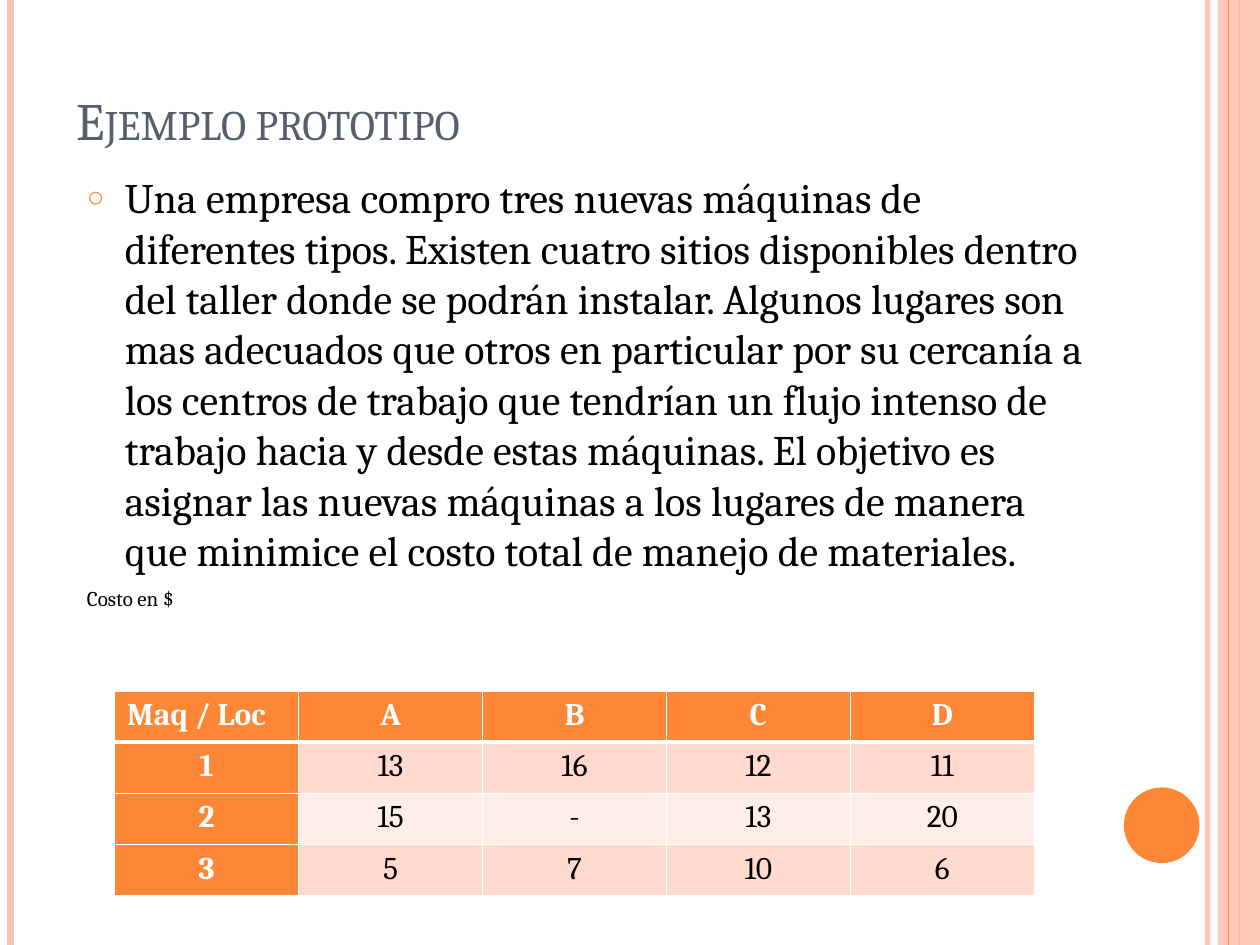
from lxml import etree
from pptx import Presentation
from pptx.dml import color
from pptx.enum import shapes, text
from pptx.oxml import ns
from pptx.util import Pt

FONT = "Cambria"
ORANGE, PEACH, WHITE, BLACK = "FE8637", "FEC3AE", "FFFFFF", "000000"
BANDS = ["FFD9CE", "FFEDE8"]
STATEMENT = (
    "Una empresa compro tres nuevas máquinas de diferentes tipos. "
    "Existen cuatro sitios disponibles dentro del taller donde se podrán instalar. "
    "Algunos lugares son mas adecuados que otros en particular por su cercanía a "
    "los centros de trabajo que tendrían un flujo intenso de trabajo hacia y desde "
    "estas máquinas. El objetivo es asignar las nuevas máquinas a los lugares de "
    "manera que minimice el costo total de manejo de materiales."
)
COSTS = [
    ["Maq / Loc", "A", "B", "C", "D"],
    ["1", "13", "16", "12", "11"],
    ["2", "15", "-", "13", "20"],
    ["3", "5", "7", "10", "6"],
]


def rgb(value):
    return color.RGBColor.from_string(value)


def sub(parent, tag, **attrs):
    return etree.SubElement(parent, ns.qn(tag), attrs)


def set_alpha(element, percent):
    sub(next(element.iter(ns.qn("a:srgbClr"))), "a:alpha", val=str(percent * 1000))


def write(p, words, size=18, fill=BLACK, bold=False, align=text.PP_ALIGN.LEFT):
    p.alignment = align
    r = p.add_run()
    r.text = words
    r.font.name, r.font.size, r.font.bold = FONT, Pt(size), bold
    r.font.color.rgb = rgb(fill)
    return r


def place(sp, left, top, width, height):
    sp.left, sp.top, sp.width, sp.height = Pt(left), Pt(top), Pt(width), Pt(height)


def add_stripe(s, x, top, height, fill, width, alpha=100):
    line = s.shapes.add_connector(
        shapes.MSO_CONNECTOR.STRAIGHT, Pt(x), Pt(top), Pt(x), Pt(top + height))
    line.line.color.rgb = rgb(fill)
    line.line.width = Pt(width)
    if alpha < 100:
        set_alpha(line.line._get_or_add_ln(), alpha)
    sub(line._element.spPr, "a:effectLst")


def add_block(s, kind, left, top, width, height, fill, alpha=100):
    sp = s.shapes.add_shape(kind, Pt(left), Pt(top), Pt(width), Pt(height))
    sp.fill.solid()
    sp.fill.fore_color.rgb = rgb(fill)
    if alpha < 100:
        set_alpha(sp._element.spPr, alpha)
    sp.line.fill.background()
    sp.shadow.inherit = False


def add_decoration(s, left, top, width, height):
    right = left + width
    add_stripe(s, right - 30, top, height, PEACH, 3, 93)
    add_stripe(s, left + 6, top, height, PEACH, 4.5)
    add_stripe(s, right - 12, top, height, ORANGE, 1.5)
    add_block(s, shapes.MSO_SHAPE.RECTANGLE, right - 24, top, 24, height, PEACH, 87)
    add_stripe(s, right - 18, top, height, ORANGE, 0.75)
    add_block(s, shapes.MSO_SHAPE.OVAL, right - 77.75, top + 450, 43.2, 43.2, ORANGE)


def add_title(s, left, top, width, height):
    sp = s.shapes.title
    place(sp, left, top, width, height)
    tf = sp.text_frame
    tf.vertical_anchor = text.MSO_ANCHOR.BOTTOM
    tf.auto_size = text.MSO_AUTO_SIZE.NONE
    r = write(tf.paragraphs[0], "Ejemplo prototipo", size=30, fill="575F6D")
    r.font._element.set("cap", "small")


def add_body(s, left, top, width, height):
    sp = s.placeholders[1]
    place(sp, left, top, width, height)
    tf = sp.text_frame
    tf.auto_size = text.MSO_AUTO_SIZE.NONE
    for p, words, size, bullet in (
        (tf.paragraphs[0], STATEMENT, 24, True),
        (tf.add_paragraph(), "Costo en $", 12, False),
    ):
        write(p, words, size=size)
        p.space_before = Pt(6)
        pPr = p._p.get_or_add_pPr()
        pPr.set("marL", str(Pt(21.6)))
        pPr.set("indent", str(Pt(-21.6)))
        if bullet:
            sub(sub(pPr, "a:buClr"), "a:srgbClr", val=ORANGE)
            sub(pPr, "a:buSzPct", val="70000")
            sub(pPr, "a:buChar", char="○")
        else:
            sub(pPr, "a:buNone")


def set_borders(cell, **widths):
    tcPr = cell._tc.get_or_add_tcPr()
    for side in "LRTB":
        ln = sub(tcPr, f"a:ln{side}", w=str(Pt(widths.get(side, 1))))
        sub(sub(ln, "a:solidFill"), "a:srgbClr", val=WHITE)


def add_cost_table(s, left, top, width, height):
    rows, cols = len(COSTS), len(COSTS[0])
    table = s.shapes.add_table(
        rows, cols, Pt(left), Pt(top), Pt(width), Pt(height)).table
    for column in table.columns:
        column.width = Pt(width / cols)
    for row in table.rows:
        row.height = Pt(height / rows)
    for i, values in enumerate(COSTS):
        for j, value in enumerate(values):
            cell = table.cell(i, j)
            header = i == 0 or j == 0
            set_borders(cell, T=3 if i == 1 else 1, B=3 if i == 0 else 1)
            cell.fill.solid()
            cell.fill.fore_color.rgb = rgb(ORANGE if header else BANDS[(i - 1) % 2])
            corner = i == j == 0
            write(cell.text_frame.paragraphs[0], value,
                  fill=WHITE if header else BLACK, bold=header,
                  align=text.PP_ALIGN.LEFT if corner else text.PP_ALIGN.CENTER)


def main():
    prs = Presentation()
    prs.slide_width, prs.slide_height = Pt(720), Pt(540)
    s = prs.slides.add_slide(prs.slide_layouts[1])
    add_decoration(s, 0, 0, 720, 540)
    add_title(s, 36.75, 0, 588, 90)
    add_body(s, 42.5, 94.5, 588, 384)
    add_cost_table(s, 65.5, 394.9, 525.6, 116.8)
    prs.save("out.pptx")


if __name__ == "__main__":
    main()
